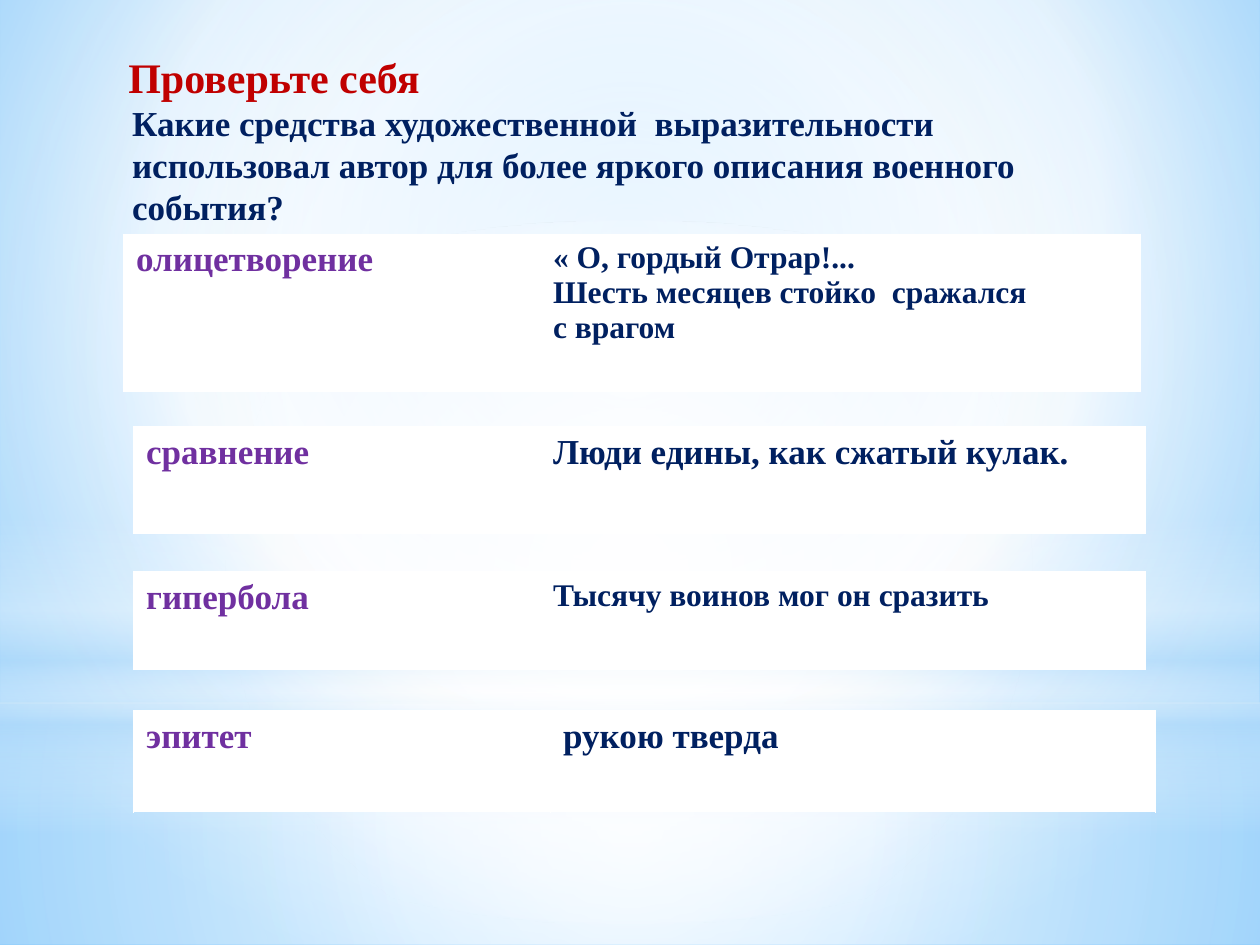
from lxml import etree
from pptx import Presentation
from pptx.dml.color import RGBColor
from pptx.enum.shapes import MSO_SHAPE as Shape
from pptx.oxml.ns import qn
from pptx.util import Inches, Pt

FONT = "Times New Roman"
WHITE, PALE, NAVY, RED, PURPLE = "FFFFFF", "B4DCFA", "002060", "C00000", "7030A0"
CENTER = (50, 50, 50, 50)


def color(value):
    return RGBColor.from_string(value)


def add_color(parent, value, alpha=100):
    node = etree.SubElement(parent, qn("a:srgbClr"), val=value)
    if alpha < 100:
        etree.SubElement(node, qn("a:alpha"), val=str(alpha * 1000))


def write(paragraph, text, size=20, fill=NAVY, indent=0):
    if indent:
        paragraph._p.get_or_add_pPr().set("marL", str(Inches(indent)))
    run = paragraph.add_run()
    run.text = text
    run.font.name = FONT
    run.font.size = Pt(size)
    run.font.bold = True
    run.font.color.rgb = color(fill)


class SlideBuilder:
    def __init__(self, presentation):
        self.slide = presentation.slides.add_slide(presentation.slide_layouts[6])

    def gradient(self, owner, element, stops, focus=None):
        owner.fill.solid()
        solid = next(element.iter(qn("a:solidFill")))
        gradient = etree.Element(qn("a:gradFill"), rotWithShape="1")
        stop_list = etree.SubElement(gradient, qn("a:gsLst"))
        for position, *stop_color in stops:
            stop = etree.SubElement(stop_list, qn("a:gs"), pos=str(position * 1000))
            add_color(stop, *stop_color)
        if focus:
            path = etree.SubElement(gradient, qn("a:path"), path="circle")
            sides = {side: str(value * 1000) for side, value in zip("ltrb", focus)}
            etree.SubElement(path, qn("a:fillToRect"), **sides)
        else:
            etree.SubElement(gradient, qn("a:lin"), ang=str(90 * 60000), scaled="0")
        solid.getparent().replace(solid, gradient)

    def background(self, stops, focus):
        self.gradient(self.slide.background, self.slide._element, stops, focus)

    def glow(self, kind, top, height, stops, focus=None):
        shape = self.slide.shapes.add_shape(
            kind, 0, Inches(top), Inches(10), Inches(height))
        shape.shadow.inherit = False
        shape.line.fill.background()
        self.gradient(shape, shape._element, stops, focus)

    def heading(self, box, title, lines):
        frame = self.slide.shapes.add_textbox(*map(Inches, box)).text_frame
        frame.word_wrap = True
        write(frame.paragraphs[0], title, size=24, fill=RED, indent=0.25)
        for line in lines:
            write(frame.add_paragraph(), line, indent=0.28)

    def border(self, cell):
        properties = cell._tc.get_or_add_tcPr()
        for index, (side, width) in enumerate(zip("LRTB", (1, 1, 1, 3))):
            line = etree.Element(qn(f"a:ln{side}"), w=str(Pt(width)))
            add_color(etree.SubElement(line, qn("a:solidFill")), WHITE)
            properties.insert(index, line)

    def answer(self, left, top, height, widths, term, lines, size):
        table = self.slide.shapes.add_table(
            1, 2, Inches(left), Inches(top), Inches(sum(widths)), Inches(height)).table
        table.rows[0].height = Inches(height)
        contents = (([term], 20, PURPLE), (lines, size, NAVY))
        for index, (texts, text_size, text_color) in enumerate(contents):
            table.columns[index].width = Inches(widths[index])
            cell = table.cell(0, index)
            cell.fill.solid()
            cell.fill.fore_color.rgb = color(WHITE)
            self.border(cell)
            for number, text in enumerate(texts):
                frame = cell.text_frame
                paragraph = frame.add_paragraph() if number else frame.paragraphs[0]
                write(paragraph, text, size=text_size, fill=text_color)


def main():
    presentation = Presentation()
    presentation.slide_width = Inches(10)
    presentation.slide_height = Inches(7.5)
    builder = SlideBuilder(presentation)

    builder.background([(0, "9ED5FF"), (60, WHITE), (100, "5BB9FF")], (20, 10, 20, 60))
    builder.glow(Shape.RECTANGLE, 5.58, 1.92,
                 [(0, WHITE, 91), (37, WHITE, 76), (100, PALE, 79)], CENTER)
    builder.glow(Shape.RECTANGLE, 0, 5.58,
                 [(0, WHITE, 89), (48, WHITE, 62), (100, PALE, 79)], CENTER)
    builder.glow(Shape.RECTANGLE, 4.12, 2.5,
                 [(0, WHITE, 0), (29, WHITE, 30), (45, PALE, 40),
                  (55, WHITE, 26), (65, PALE, 60), (100, WHITE, 0)])
    builder.glow(Shape.OVAL, 1.75, 5.58, [(0, WHITE), (56, WHITE, 0)], CENTER)

    builder.heading((0.67, 0.36, 8.26, 3.33), "Проверьте себя", [
        "Какие средства художественной  выразительности",
        "использовал автор для более яркого описания военного",
        "события?",
    ])

    answers = [
        (0.98, 1.86, 1.23, (3.31, 4.76), "олицетворение",
         ["« О, гордый Отрар!...", "Шесть месяцев стойко  сражался", "с врагом"], 18),
        (1.06, 3.39, 0.83, (3.23, 4.8), "сравнение",
         ["Люди едины, как сжатый кулак."], 20),
        (1.06, 4.54, 0.76, (3.23, 4.8), "гипербола",
         ["Тысячу воинов мог он сразить"], 18),
        (1.06, 5.64, 0.79, (3.31, 4.8), "эпитет", ["рукою тверда"], 20),
    ]
    for answer in answers:
        builder.answer(*answer)

    presentation.save("out.pptx")


if __name__ == "__main__":
    main()
